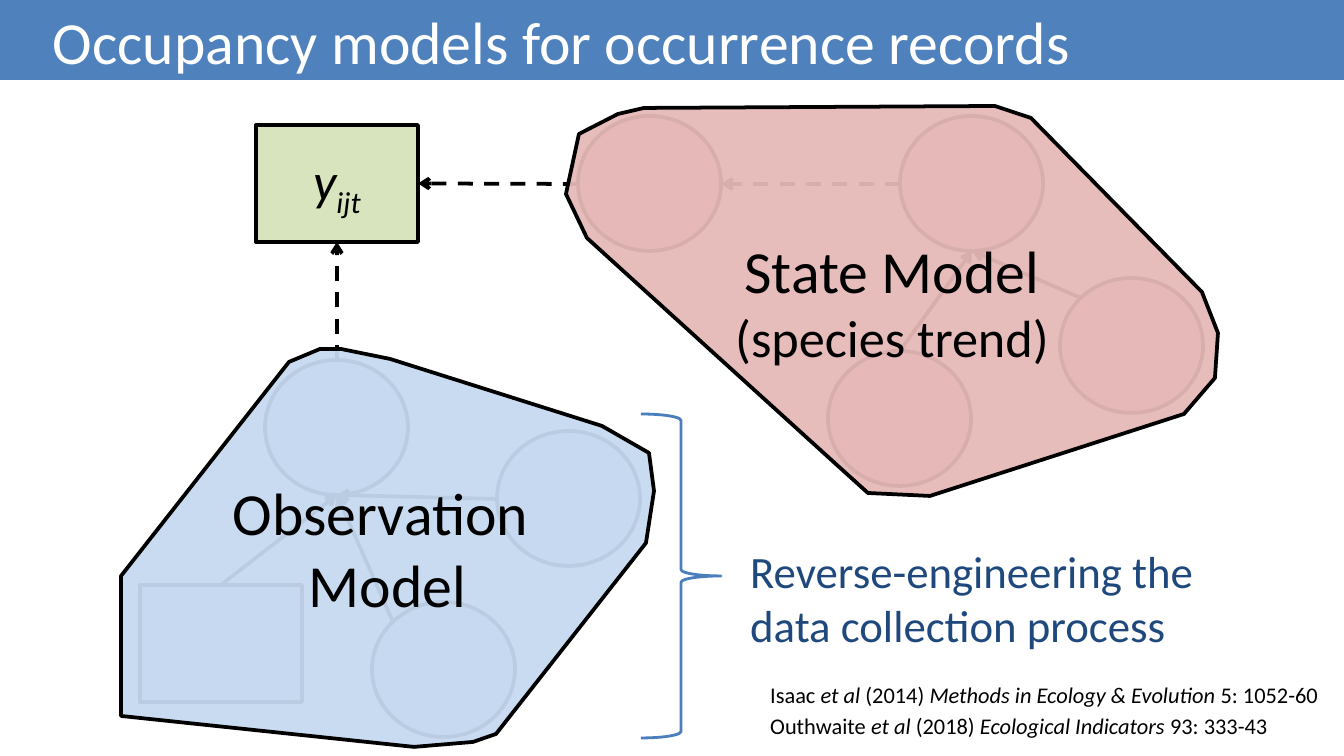
import pptx
import pptx.util
import pptx.dml.color
import pptx.enum.dml
import pptx.enum.shapes
import pptx.enum.text
import pptx.oxml.ns
from lxml import etree

Pt = pptx.util.Pt
RGB = pptx.dml.color.RGBColor
SHAPE = pptx.enum.shapes.MSO_SHAPE
ALIGN = pptx.enum.text.PP_ALIGN
MIDDLE = pptx.enum.text.MSO_ANCHOR.MIDDLE
qn = pptx.oxml.ns.qn

PX = 914400 / 134.4  # EMU per px
BLACK, WHITE = RGB(0, 0, 0), RGB(255, 255, 255)
BLUE, BRACE, NAVY = RGB(0x4F, 0x81, 0xBD), RGB(0x4B, 0x7E, 0xBC), RGB(0x1F, 0x49, 0x7D)
GREEN, PINK, PALE = RGB(0xD7, 0xE4, 0xBD), RGB(0xE6, 0xB9, 0xB8), RGB(0xC6, 0xD9, 0xF1)


def px(*values):
    return [round(v * PX) for v in values]


def style(p, size, color, align=ALIGN.LEFT):
    p.font.name, p.font.size, p.font.color.rgb = "Calibri", Pt(size), color
    p.alignment = align


prs = pptx.Presentation()
prs.slide_width, prs.slide_height = px(1344, 756)
s = prs.slides.add_slide(prs.slide_layouts[6])

# Title bar
sp = s.shapes.add_shape(SHAPE.RECTANGLE, *px(0, 0, 1344, 80))
sp.shadow.inherit = False
sp.fill.solid()
sp.fill.fore_color.rgb = BLUE
sp.line.fill.background()
tf = sp.text_frame
tf.margin_left, tf.margin_right, tf.margin_top, tf.margin_bottom = px(53, 53, 2, 0)
tf.vertical_anchor = MIDDLE
tf.text = "Occupancy models for occurrence records"
style(tf.paragraphs[0], 32, WHITE)

# Model variables: name, left, top, fill, shape
SIZES = {SHAPE.RECTANGLE: (162, 117), SHAPE.OVAL: (143, 135)}
nodes = {}
for name, x, y, fill, kind in [
    ("y", 256, 125, GREEN, SHAPE.RECTANGLE),
    ("z", 578, 116, PINK, SHAPE.OVAL),
    ("p", 265, 360, PALE, SHAPE.OVAL),
    ("Ψ", 900, 116, PINK, SHAPE.OVAL),
    ("L", 140, 585, PALE, SHAPE.RECTANGLE),
    ("a", 497, 431, PALE, SHAPE.OVAL),
    ("c", 372, 602, PALE, SHAPE.OVAL),
    ("b", 1060, 278, PINK, SHAPE.OVAL),
    ("u", 828, 351, PINK, SHAPE.OVAL),
]:
    sp = nodes[name] = s.shapes.add_shape(kind, *px(x, y, *SIZES[kind]))
    sp.shadow.inherit = False
    sp.fill.solid()
    sp.fill.fore_color.rgb = fill
    sp.line.color.rgb, sp.line.width = BLACK, Pt(2)

# Label of the observed variable, with subscript
tf = nodes["y"].text_frame
tf.vertical_anchor = MIDDLE
p = tf.paragraphs[0]
style(p, 28, BLACK, ALIGN.CENTER)
p.font.italic = True
p.add_run().text = "y"
r = p.add_run()
r.text = "ijt"
r._r.get_or_add_rPr().set("baseline", "-25000")

# Arrows: start, end, dashed, rectangle joined at start, rectangle joined at end
for start, end, dashed, begin_at, end_at in [
    ((337, 360), (337, 242), True, None, ("y", 2)),
    ((900, 184), (721, 184), True, None, None),
    ((578, 184), (418, 184), True, None, ("y", 3)),
    ((497, 499), (337, 495), False, None, None),
    ((393, 622), (337, 495), False, None, None),
    ((221, 585), (337, 495), False, ("L", 0), None),
    ((1081, 298), (972, 251), False, None, None),
    ((900, 351), (972, 251), False, None, None),
]:
    c = s.shapes.add_connector(pptx.enum.shapes.MSO_CONNECTOR.STRAIGHT, *px(*start, *end))
    if begin_at:
        c.begin_connect(nodes[begin_at[0]], begin_at[1])
    if end_at:
        c.end_connect(nodes[end_at[0]], end_at[1])
    c.line.color.rgb, c.line.width = BLACK, Pt(2)
    if dashed:
        c.line.dash_style = pptx.enum.dml.MSO_LINE.DASH
    etree.SubElement(c.line._get_or_add_ln(), qn("a:tailEnd"), type="arrow")
    etree.SubElement(c._element.spPr, qn("a:effectLst"))

# Brace and its note
sp = s.shapes.add_shape(SHAPE.RIGHT_BRACE, *px(641, 414, 80, 324))
sp.shadow.inherit = False
sp.adjustments[0], sp.adjustments[1] = 0.08, 0.5
sp.fill.background()
sp.line.color.rgb, sp.line.width = BRACE, Pt(1.5)
tf = s.shapes.add_textbox(*px(737, 537, 528, 122)).text_frame
tf.word_wrap = True
tf.text = "Reverse-engineering the data collection process"
style(tf.paragraphs[0], 24, NAVY)

# Translucent regions over the two submodels
STATE = [(644, 108), (995, 106), (1031, 118), (1202, 292), (1218, 333), (1215, 378),
         (1184, 414), (930, 496), (868, 493), (837, 465), (587, 238), (566, 194),
         (579, 134), (618, 114)]
OBSERVATION = [(341, 349), (390, 359), (602, 426), (649, 453), (654, 491), (646, 543),
               (496, 734), (473, 742), (414, 747), (121, 716), (121, 576), (289, 362),
               (320, 349)]
for points, fill, lines in [
    (STATE, PINK, [("State Model", 32), ("(species trend)", 28)]),
    (OBSERVATION, PALE, [("Observation ", 32), ("Model", 32)]),
]:
    fb = s.shapes.build_freeform(*points[0], scale=PX)
    fb.add_line_segments(points[1:], close=True)
    sp = fb.convert_to_shape()
    sp.shadow.inherit = False
    sp.fill.solid()
    sp.fill.fore_color.rgb = fill
    color = sp._element.spPr.find(qn("a:solidFill"))[0]
    etree.SubElement(color, qn("a:alpha"), val="94000")
    sp.line.color.rgb, sp.line.width = BLACK, Pt(2)
    tf = sp.text_frame
    tf.vertical_anchor = MIDDLE
    tf.text = "\n".join(text for text, size in lines)
    for p, (text, size) in zip(tf.paragraphs, lines):
        style(p, size, BLACK, ALIGN.CENTER)

# References: roman and italic runs alternate
tf = s.shapes.add_textbox(*px(757, 675, 586, 74)).text_frame
tf.word_wrap = False
for i, parts in enumerate([
    ("Isaac ", "et al", " (2014) ", "Methods in Ecology & Evolution ", "5: 1052-60"),
    ("Outhwaite ", "et al ", "(2018) ", "Ecological Indicators ", "93: 333-43"),
]):
    p = tf.add_paragraph() if i else tf.paragraphs[0]
    style(p, 12, BLACK)
    p.space_before = Pt(2)
    for j, part in enumerate(parts):
        r = p.add_run()
        r.text = part
        r.font.italic = j % 2 == 1

prs.save("out.pptx")
